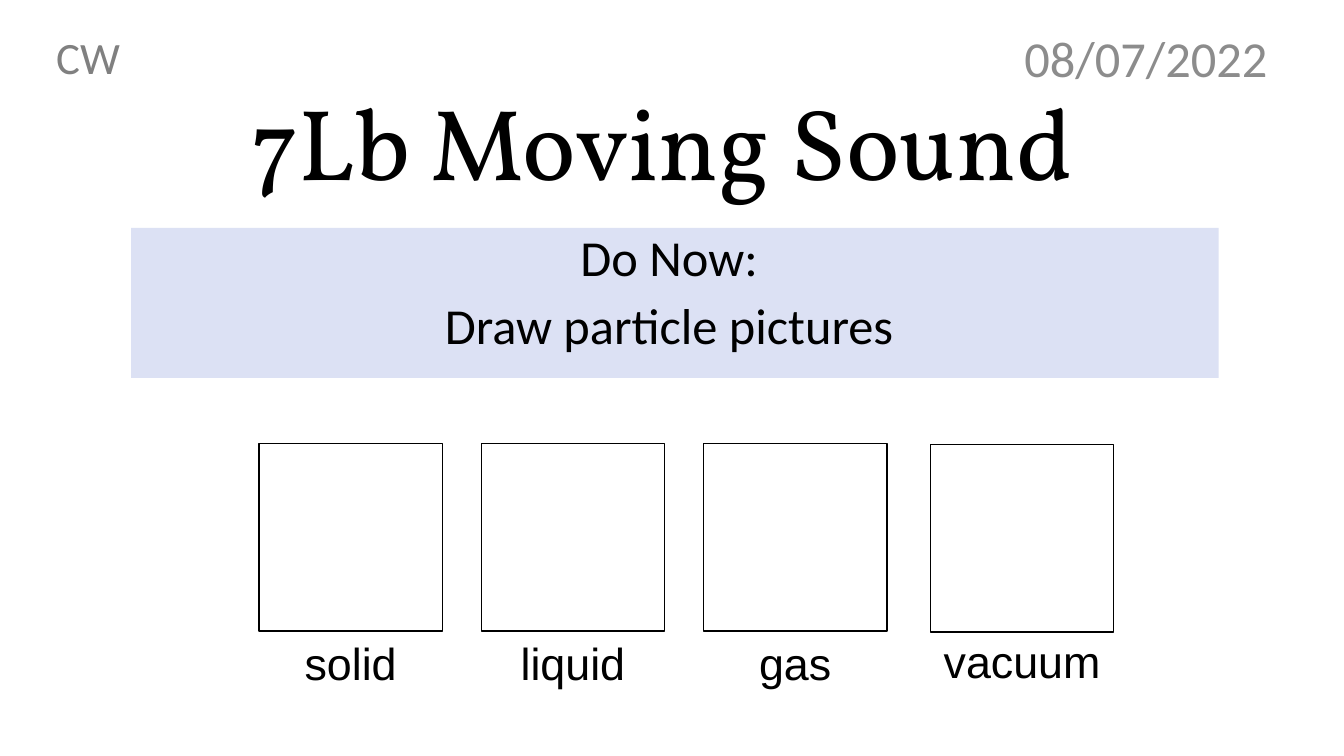
"""Build the Moving Sound starter slide with four particle boxes."""
from dataclasses import dataclass
from typing import Optional

import pptx
import pptx.dml.color
import pptx.enum.shapes
import pptx.enum.text
import pptx.slide
import pptx.util

Pt = pptx.util.Pt
RGB = pptx.dml.color.RGBColor
Align = pptx.enum.text.PP_ALIGN
Anchor = pptx.enum.text.MSO_ANCHOR
AutoSize = pptx.enum.text.MSO_AUTO_SIZE


@dataclass(frozen=True)
class Theme:
    ink: RGB = RGB(0, 0, 0)
    panel: RGB = RGB(0xDC, 0xE1, 0xF4)
    date_grey: RGB = RGB(0x8C, 0x8C, 0x8C)
    mark_grey: RGB = RGB(0x80, 0x80, 0x80)
    title_font: str = "Vollkorn"
    body_font: str = "Calibri"
    label_font: str = "Arial"
    title_size: float = 72
    body_size: float = 36
    label_size: float = 32


THEME = Theme()


@dataclass(frozen=True)
class Area:
    left: float
    top: float
    width: float
    height: float

    def lengths(self) -> tuple:
        """Return the area as lengths in points."""
        return Pt(self.left), Pt(self.top), Pt(self.width), Pt(self.height)


@dataclass(frozen=True)
class Caption:
    lines: tuple[str, ...]
    area: Area
    font: str
    size: float
    color: RGB = THEME.ink
    align: Align = Align.CENTER
    anchor: Anchor = Anchor.TOP
    wrap: bool = True
    grow: bool = False
    line_spacing: float = 1.0
    space_before: float = 0
    fill: Optional[RGB] = None


@dataclass(frozen=True)
class Particles:
    name: str
    left: float
    top: float
    label_top: float
    label_width: float


BOX_WIDTH, BOX_HEIGHT, LABEL_HEIGHT = 131, 134, 46
FIRST_LEFT, STEP = 185, 158.75
BOX_TOP, LABEL_TOP, LABEL_WIDTH = 316.8, 450.7, 112.3

STATES = [
    Particles(name, FIRST_LEFT + STEP * index, BOX_TOP, LABEL_TOP, LABEL_WIDTH)
    for index, name in enumerate(("solid", "liquid", "gas"))
] + [Particles("vacuum", 664.6, 317.5, 449.3, 128.9)]

HEADINGS = [
    Caption(("7Lb Moving Sound ",), Area(120, 41, 720, 107.3),
            THEME.title_font, THEME.title_size, anchor=Anchor.BOTTOM, line_spacing=0.9),
    Caption(("Do Now: ", "Draw particle pictures "), Area(93.6, 162.7, 776.9, 107.3),
            THEME.body_font, THEME.body_size, line_spacing=0.9, space_before=10,
            fill=THEME.panel),
    Caption(("08/07/2022",), Area(710.6, 26.6, 216, 28.8),
            THEME.body_font, THEME.body_size, THEME.date_grey, anchor=Anchor.MIDDLE),
    Caption(("CW",), Area(33.1, 18, 60.5, 46), THEME.body_font, THEME.label_size,
            THEME.mark_grey, align=Align.LEFT, wrap=False, grow=True),
]


def apply(target: object, values: dict) -> None:
    """Set each named format value on the target."""
    for name, value in values.items():
        setattr(target, name, value)


def draw_caption(page: pptx.slide.Slide, caption: Caption) -> None:
    """Draw a text box with one paragraph per line."""
    box = page.shapes.add_textbox(*caption.area.lengths())
    if caption.fill is not None:
        box.fill.solid()
        box.fill.fore_color.rgb = caption.fill
    frame = box.text_frame
    apply(frame, {
        "word_wrap": caption.wrap,
        "vertical_anchor": caption.anchor,
        "auto_size": AutoSize.SHAPE_TO_FIT_TEXT if caption.grow else AutoSize.NONE,
    })
    for index, line in enumerate(caption.lines):
        para = frame.add_paragraph() if index else frame.paragraphs[0]
        apply(para, {
            "alignment": caption.align,
            "line_spacing": caption.line_spacing,
            "space_before": Pt(caption.space_before),
        })
        span = para.add_run()
        span.text = line
        apply(span.font, {"name": caption.font, "size": Pt(caption.size)})
        span.font.color.rgb = caption.color


def draw_particles(page: pptx.slide.Slide, state: Particles) -> None:
    """Draw an empty drawing box with its label centred below."""
    area = Area(state.left, state.top, BOX_WIDTH, BOX_HEIGHT)
    box = page.shapes.add_shape(
        pptx.enum.shapes.MSO_SHAPE.RECTANGLE, *area.lengths())
    box.shadow.inherit = False
    box.fill.background()
    box.line.color.rgb = THEME.ink
    box.line.width = Pt(1)
    label_left = state.left + (BOX_WIDTH - state.label_width) / 2
    draw_caption(page, Caption(
        (state.name,), Area(label_left, state.label_top, state.label_width, LABEL_HEIGHT),
        THEME.label_font, THEME.label_size, grow=True))


def main() -> None:
    """Build and save the deck."""
    deck = pptx.Presentation()
    apply(deck, {"slide_width": Pt(960), "slide_height": Pt(540)})
    page = deck.slides.add_slide(deck.slide_layouts[6])
    for heading in HEADINGS:
        draw_caption(page, heading)
    for state in STATES:
        draw_particles(page, state)
    deck.save("out.pptx")


if __name__ == "__main__":
    main()
